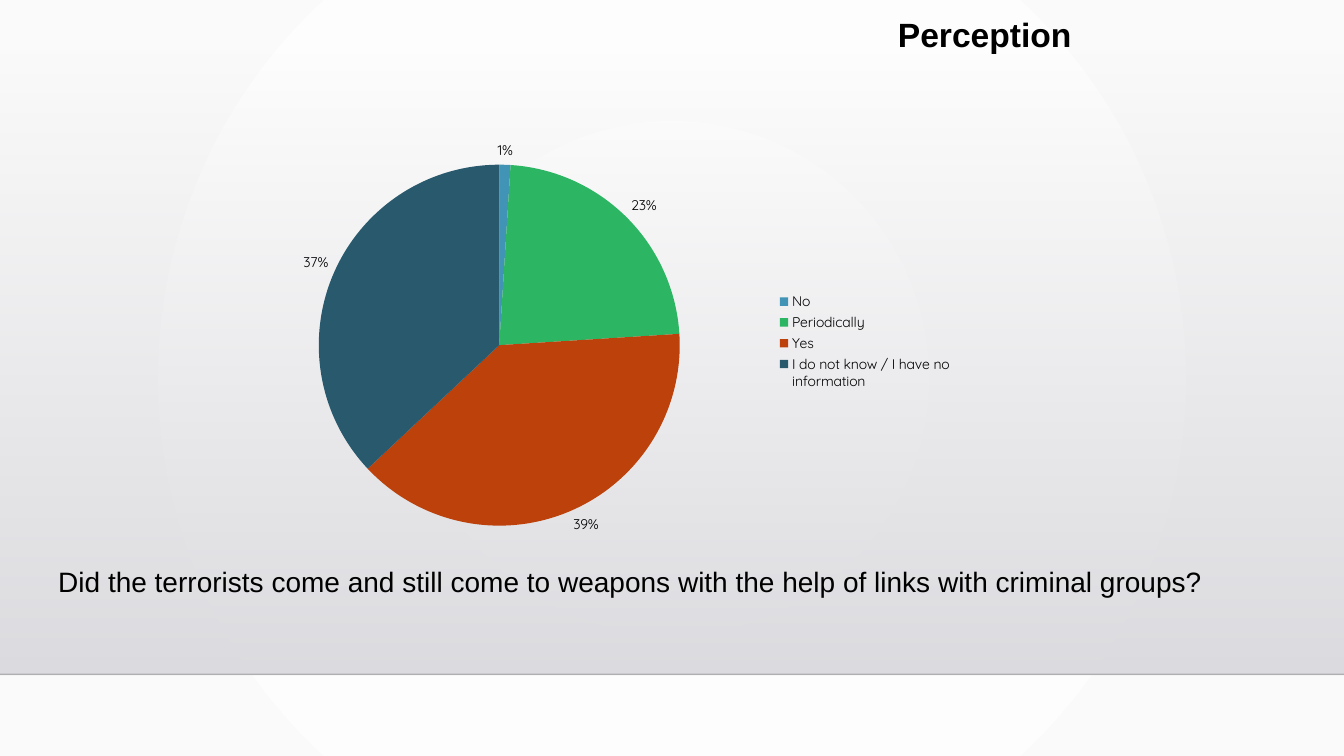
from lxml import etree
from pptx import Presentation
from pptx.chart.data import CategoryChartData
from pptx.dml.color import RGBColor
from pptx.enum.chart import XL_CHART_TYPE, XL_LABEL_POSITION, XL_LEGEND_POSITION
from pptx.enum.shapes import MSO_CONNECTOR, MSO_SHAPE
from pptx.enum.text import MSO_AUTO_SIZE
from pptx.oxml.ns import qn
from pptx.util import Pt

PIE = XL_CHART_TYPE.PIE
OUTSIDE = XL_LABEL_POSITION.OUTSIDE_END
RIGHT = XL_LEGEND_POSITION.RIGHT
RECT = MSO_SHAPE.RECTANGLE
STRAIGHT = MSO_CONNECTOR.STRAIGHT
GROW = MSO_AUTO_SIZE.SHAPE_TO_FIT_TEXT

WIDTH, HEIGHT = 960, 540
EDGE = 481.7


def color(code):
    return RGBColor.from_string(code)


def add(parent, tag, **attrs):
    return etree.SubElement(parent, qn(tag), attrs)


class Page:
    ink = "000000"
    text_font = "Arial"
    chart_font = "Quicksand"

    def __init__(self, slide):
        self.slide = slide
        self.shapes = slide.shapes

    def style(self, font, name, size, bold=False):
        font.name = name
        font.size = Pt(size)
        font.bold = bold
        font.color.rgb = color(self.ink)

    def blend(self, fill, codes):
        fill.gradient()
        for stop, code in zip(fill.gradient_stops, codes):
            stop.color.rgb = color(code)

    def backdrop(self, inner, outer):
        self.blend(self.slide.background.fill, (inner, outer))
        grad = self.slide.element.find(".//" + qn("a:gradFill"))
        grad.remove(grad.find(qn("a:lin")))
        ring = add(grad, "a:path", path="circle")
        add(ring, "a:fillToRect", l="50000", t="50000", r="50000", b="50000")

    def shade(self, x, y, w, h, top, base):
        box = self.shapes.add_shape(RECT, Pt(x), Pt(y), Pt(w), Pt(h))
        box.shadow.inherit = False
        box.line.fill.background()
        self.blend(box.fill, (top, base))
        box.fill.gradient_angle = 270
        first = box.element.find(".//" + qn("a:srgbClr"))
        add(first, "a:alpha", val="0")

    def rule(self, x1, y1, x2, y2, code, alpha):
        line = self.shapes.add_connector(STRAIGHT, Pt(x1), Pt(y1), Pt(x2), Pt(y2))
        line.line.width = Pt(1)
        line.line.color.rgb = color(code)
        tint = line.element.find(".//" + qn("a:srgbClr"))
        add(tint, "a:alpha", val=str(alpha * 1000))
        add(line.element.spPr, "a:effectLst")

    def text(self, x, y, w, h, words, size, bold=False):
        box = self.shapes.add_textbox(Pt(x), Pt(y), Pt(w), Pt(h))
        frame = box.text_frame
        frame.word_wrap = False
        frame.auto_size = GROW
        frame.text = words
        self.style(frame.paragraphs[0].runs[0].font, self.text_font, size, bold)

    def pie(self, x, y, w, h, parts):
        data = CategoryChartData()
        data.categories = [name for name, _, _ in parts]
        data.add_series("Series 1", [value for _, value, _ in parts])
        frame = self.shapes.add_chart(PIE, Pt(x), Pt(y), Pt(w), Pt(h), data)
        chart = frame.chart
        chart.has_title = False
        self.style(chart.font, self.chart_font, 10)

        # Legend
        chart.has_legend = True
        chart.legend.position = RIGHT
        chart.legend.include_in_layout = False
        self.style(chart.legend.font, self.chart_font, 10)

        # Slices
        plot = chart.plots[0]
        plot.vary_by_categories = True
        for i, (_, _, code) in enumerate(parts):
            slice_ = plot.series[0].points[i].format
            slice_.fill.solid()
            slice_.fill.fore_color.rgb = color(code)
            slice_.line.fill.background()

        # Percent labels
        labels = plot.series[0].data_labels
        labels.show_value = False
        labels.show_percentage = True
        labels.number_format = "0%"
        labels.number_format_is_linked = False
        labels.position = OUTSIDE
        self.style(labels.font, self.chart_font, 10)


def main():
    deck = Presentation()
    deck.slide_width, deck.slide_height = Pt(WIDTH), Pt(HEIGHT)
    page = Page(deck.slides.add_slide(deck.slide_layouts[6]))

    # Background
    page.backdrop("FFFFFF", "FAFAFA")
    page.shade(0, 36.7, WIDTH, EDGE - 36.7, "DCDCE0", "DEDEE2")
    page.rule(0, EDGE, WIDTH, EDGE, "000001", 20)

    # Title and question
    page.text(634.3, 6.5, 139.7, 36, "Perception", 24, True)
    page.text(34.5, 399.6, 838, 31.5,
              "Did the terrorists come and still come to weapons "
              "with the help of links with criminal groups?", 20)

    # Answers
    page.pie(145.5, 91.5, 542, 304.5, [
        ("No", 1, "4294B6"),
        ("Periodically", 23, "2CB663"),
        ("Yes", 39, "BC410A"),
        ("I do not know / I have no information", 37, "28596D"),
    ])
    deck.save("out.pptx")


if __name__ == "__main__":
    main()
